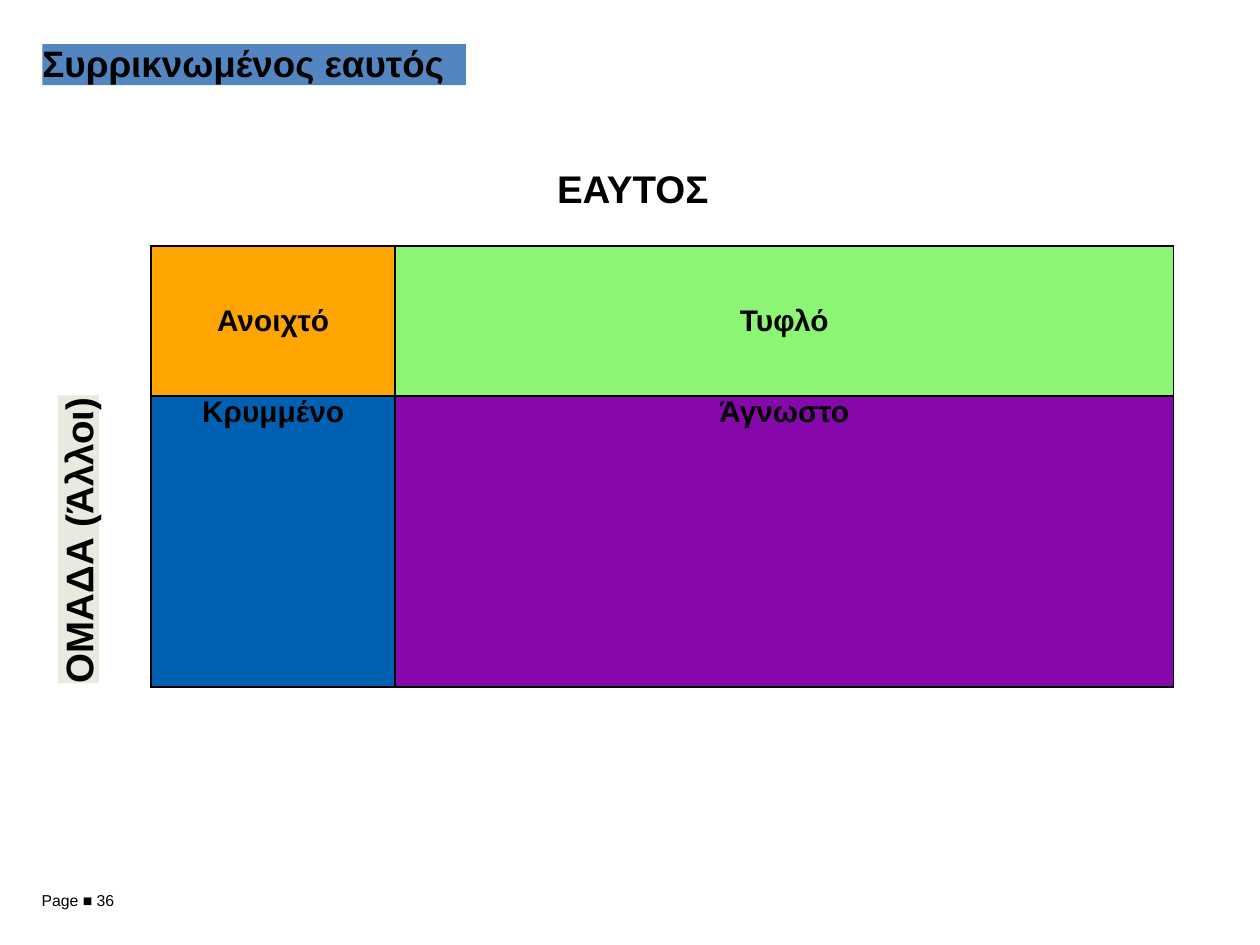
from dataclasses import dataclass

from lxml import etree
from pptx import Presentation
from pptx.dml.color import RGBColor
from pptx.enum.shapes import MSO_SHAPE
from pptx.enum.text import MSO_ANCHOR, PP_ALIGN
from pptx.oxml.ns import qn
from pptx.util import Pt

RECT = MSO_SHAPE.RECTANGLE
TOP, MIDDLE = MSO_ANCHOR.TOP, MSO_ANCHOR.MIDDLE
LEFT, CENTER = PP_ALIGN.LEFT, PP_ALIGN.CENTER
MARGINS = dict.fromkeys(
    ("margin_left", "margin_right", "margin_top", "margin_bottom"), 0)


@dataclass(frozen=True)
class Theme:
    font: str = "Arial"
    ink: str = "000000"
    title_fill: str = "5386C1"
    group_fill: str = "EAE9DF"
    open_fill: str = "FEA501"
    blind_fill: str = "8CF574"
    hidden_fill: str = "0061B2"
    unknown_fill: str = "8608AA"
    title: float = 21
    axis: float = 22
    cell: float = 17
    footer: float = 9
    border: float = 1


THEME = Theme()


def set_attrs(obj, values):
    for name, value in values.items():
        setattr(obj, name, value)


def write(tf, text, size, spacing, bold=True, align=LEFT):
    p = tf.paragraphs[0]
    set_attrs(p, {"alignment": align, "line_spacing": Pt(spacing)})
    r = p.add_run()
    r.text = text
    set_attrs(r.font, {"name": THEME.font, "size": Pt(size), "bold": bold})
    r.font.color.rgb = RGBColor.from_string(THEME.ink)


def add_label(slide, box, text, size, spacing, fill=None, bold=True, vert=None):
    """Place a line of text, on a filled rectangle if a fill is given."""
    box = [Pt(v) for v in box]
    if fill:
        sp = slide.shapes.add_shape(RECT, *box)
        sp.shadow.inherit = False
        sp.fill.solid()
        sp.fill.fore_color.rgb = RGBColor.from_string(fill)
        sp.line.fill.background()
    else:
        sp = slide.shapes.add_textbox(*box)
    tf = sp.text_frame
    set_attrs(tf, {**MARGINS, "word_wrap": False, "vertical_anchor": TOP})
    if vert:
        sp.element.txBody.bodyPr.set("vert", vert)
    write(tf, text, size, spacing, bold)


def add_borders(frame):
    for tc_pr in frame.element.iter(qn("a:tcPr")):
        for i, side in enumerate(("a:lnL", "a:lnR", "a:lnT", "a:lnB")):
            ln = etree.Element(qn(side), w=str(Pt(THEME.border)))
            fill = etree.SubElement(ln, qn("a:solidFill"))
            etree.SubElement(fill, qn("a:srgbClr"), val=THEME.ink)
            tc_pr.insert(i, ln)


def add_window(slide, box, first_width, first_height):
    """Draw the four panes; the first column and row have the given sizes."""
    x, y, w, h = box
    panes = (
        (MIDDLE, (("Ανοιχτό", THEME.open_fill), ("Τυφλό", THEME.blind_fill))),
        (TOP, (("Κρυμμένο", THEME.hidden_fill), ("Άγνωστο", THEME.unknown_fill))),
    )
    frame = slide.shapes.add_table(2, 2, Pt(x), Pt(y), Pt(w), Pt(h))
    table = frame.table
    set_attrs(table, {"first_row": False, "horz_banding": False})
    for i, width in enumerate((first_width, w - first_width)):
        table.columns[i].width = Pt(width)
    for i, height in enumerate((first_height, h - first_height)):
        table.rows[i].height = Pt(height)
    for row, (anchor, cells) in enumerate(panes):
        for col, (text, fill) in enumerate(cells):
            cell = table.cell(row, col)
            set_attrs(cell, {**MARGINS, "vertical_anchor": anchor})
            cell.fill.solid()
            cell.fill.fore_color.rgb = RGBColor.from_string(fill)
            write(cell.text_frame, text, THEME.cell, 19, align=CENTER)
    add_borders(frame)


def main():
    prs = Presentation()
    prs.slide_width, prs.slide_height = Pt(720), Pt(540)
    slide = prs.slides.add_slide(prs.slide_layouts[6])
    add_label(slide, (33.2, 226, 23.4, 164.4), "ΟΜΑΔΑ (Άλλοι)",
              THEME.axis, 24.6, THEME.group_fill, vert="vert270")
    add_label(slide, (24.2, 25.2, 242, 23.5), "Συρρικνωμένος εαυτός",
              THEME.title, 23.5, THEME.title_fill)
    add_label(slide, (318.4, 96, 92, 19.5), "ΕΑΥΤΟΣ", THEME.axis, 24.6)
    add_window(slide, (86.4, 140.6, 584.2, 252), 139.4, 85.7)
    add_label(slide, (23.8, 509.8, 48, 12.2), "Page ■ 36",
              THEME.footer, 10, bold=False)
    prs.save("out.pptx")


if __name__ == "__main__":
    main()
